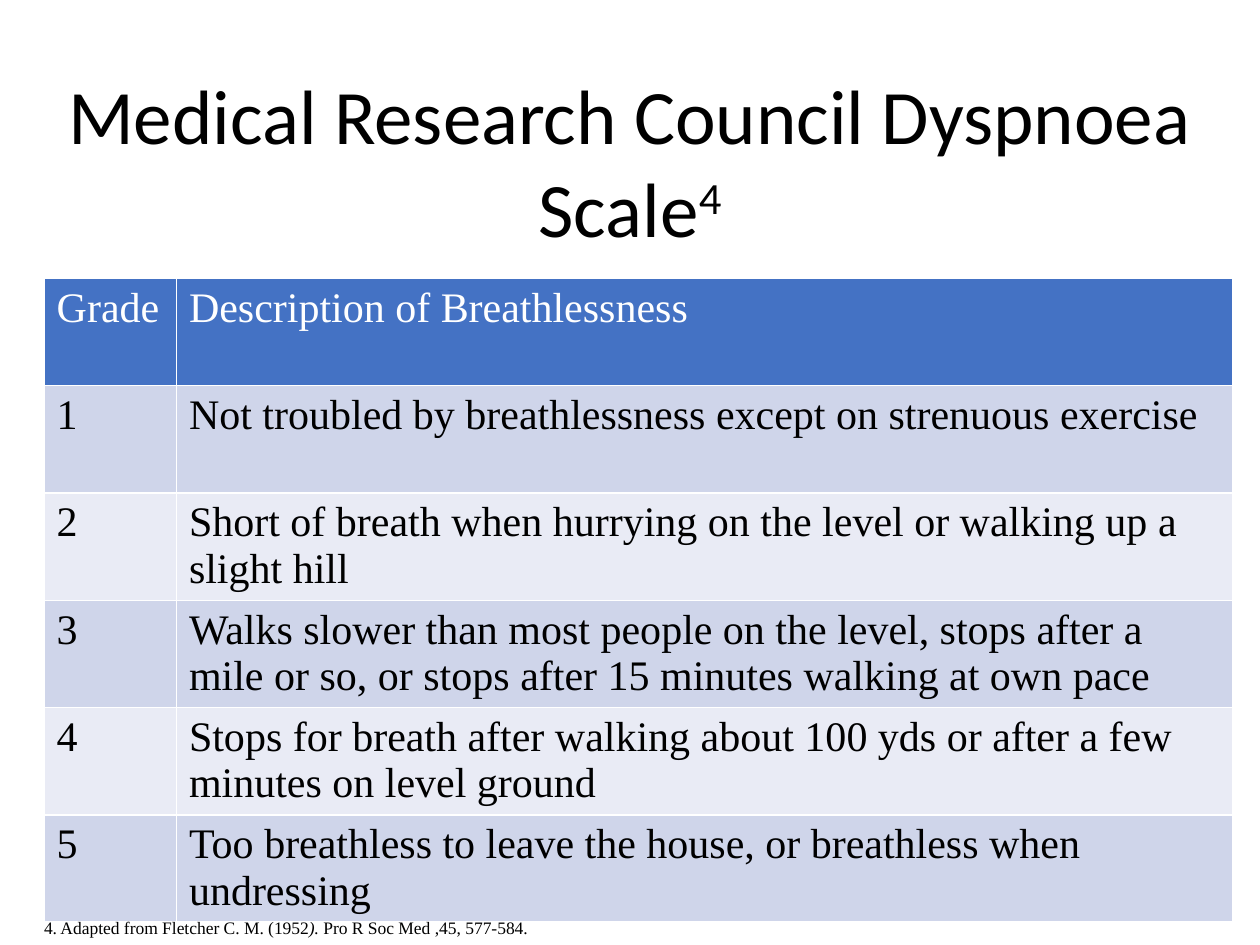
from lxml.etree import SubElement
from pptx import Presentation
from pptx.dml.color import RGBColor
from pptx.enum.text import MSO_ANCHOR, PP_ALIGN
from pptx.oxml.ns import qn
from pptx.util import Inches, Pt

COLORS = {
    "text": "000000",
    "white": "FFFFFF",
    "header": "4472C4",
    "odd": "CFD5EA",
    "even": "E9EBF5",
}
TITLE_FONT = {"name": "Calibri", "size": Pt(44)}
TABLE_FONT = {"name": "Times New Roman", "size": Pt(24)}
SOURCE_FONT = {"name": "Times New Roman", "size": Pt(10)}

GRADES = [
    "Not troubled by breathlessness except on strenuous exercise",
    "Short of breath when hurrying on the level or walking up a slight hill",
    "Walks slower than most people on the level, stops after a mile or so, "
    "or stops after 15 minutes walking at own pace",
    "Stops for breath after walking about 100 yds or after a few minutes on level ground",
    "Too breathless to leave the house, or breathless when undressing",
]


class SlideBuilder:
    def __init__(self, slide):
        self.slide = slide

    def add_run(self, paragraph, text, style, color="text", italic=None, baseline=None):
        """Add a styled run; baseline raises it by that percentage of its size."""
        run = paragraph.add_run()
        run.text = text
        for attribute, value in {**style, "italic": italic}.items():
            setattr(run.font, attribute, value)
        run.font.color.rgb = RGBColor.from_string(COLORS[color])
        if baseline:
            run.font._element.set("baseline", str(baseline * 1000))

    def add_text(self, box, runs, style, align=PP_ALIGN.LEFT, margin_left=0.1):
        """Add a text box whose runs are (text, format) pairs."""
        frame = self.slide.shapes.add_textbox(*map(Inches, box)).text_frame
        settings = {
            "word_wrap": True,
            "vertical_anchor": MSO_ANCHOR.TOP,
            "margin_left": Inches(margin_left),
        }
        for attribute, value in settings.items():
            setattr(frame, attribute, value)
        paragraph = frame.paragraphs[0]
        paragraph.alignment = align
        for text, run_format in runs:
            self.add_run(paragraph, text, style, **run_format)

    def add_borders(self, cell, width=1):
        properties = cell._tc.get_or_add_tcPr()
        for position, side in enumerate(("lnL", "lnR", "lnT", "lnB")):
            line = properties.makeelement(qn(f"a:{side}"), {"w": str(Pt(width))})
            fill = SubElement(line, qn("a:solidFill"))
            SubElement(fill, qn("a:srgbClr"), val=COLORS["white"])
            properties.insert(position, line)

    def add_table(self, box, column_widths, rows, style):
        table = self.slide.shapes.add_table(
            len(rows), len(column_widths), *map(Inches, box)
        ).table
        for column, width in zip(table.columns, column_widths):
            column.width = Inches(width)
        for row_index, texts in enumerate(rows):
            band = "odd" if row_index % 2 else "even"
            fill, color = (band, "text") if row_index else ("header", "white")
            for column_index, text in enumerate(texts):
                cell = table.cell(row_index, column_index)
                cell.margin_bottom = 0  # keeps two-line rows at the common height
                cell.fill.solid()
                cell.fill.fore_color.rgb = RGBColor.from_string(COLORS[fill])
                self.add_borders(cell)
                self.add_run(cell.text_frame.paragraphs[0], text, style, color)


def main():
    presentation = Presentation()
    presentation.slide_width = Inches(10)
    presentation.slide_height = Inches(7.5)
    builder = SlideBuilder(presentation.slides.add_slide(presentation.slide_layouts[6]))

    builder.add_text(
        (0.35, 0.49, 9.3, 1.01),
        [("Medical Research Council Dyspnoea Scale", {}), ("4", {"baseline": 30})],
        TITLE_FONT,
        align=PP_ALIGN.CENTER,
    )
    rows = [("Grade", "Description of Breathlessness")]
    rows += [(str(grade), text) for grade, text in enumerate(GRADES, 1)]
    builder.add_table((0.35, 2.21, 9.43, 5.11), (1.05, 8.38), rows, TABLE_FONT)
    builder.add_text(
        (0.35, 7.23, 5.67, 0.27),
        [
            ("4. Adapted from Fletcher C. M. (1952", {}),
            ("). ", {"italic": True}),
            ("Pro R Soc Med\u00a0,45, 577-584.".replace("\u00a0", " "), {}),
        ],
        SOURCE_FONT,
        margin_left=0,
    )
    presentation.save("out.pptx")


if __name__ == "__main__":
    main()
